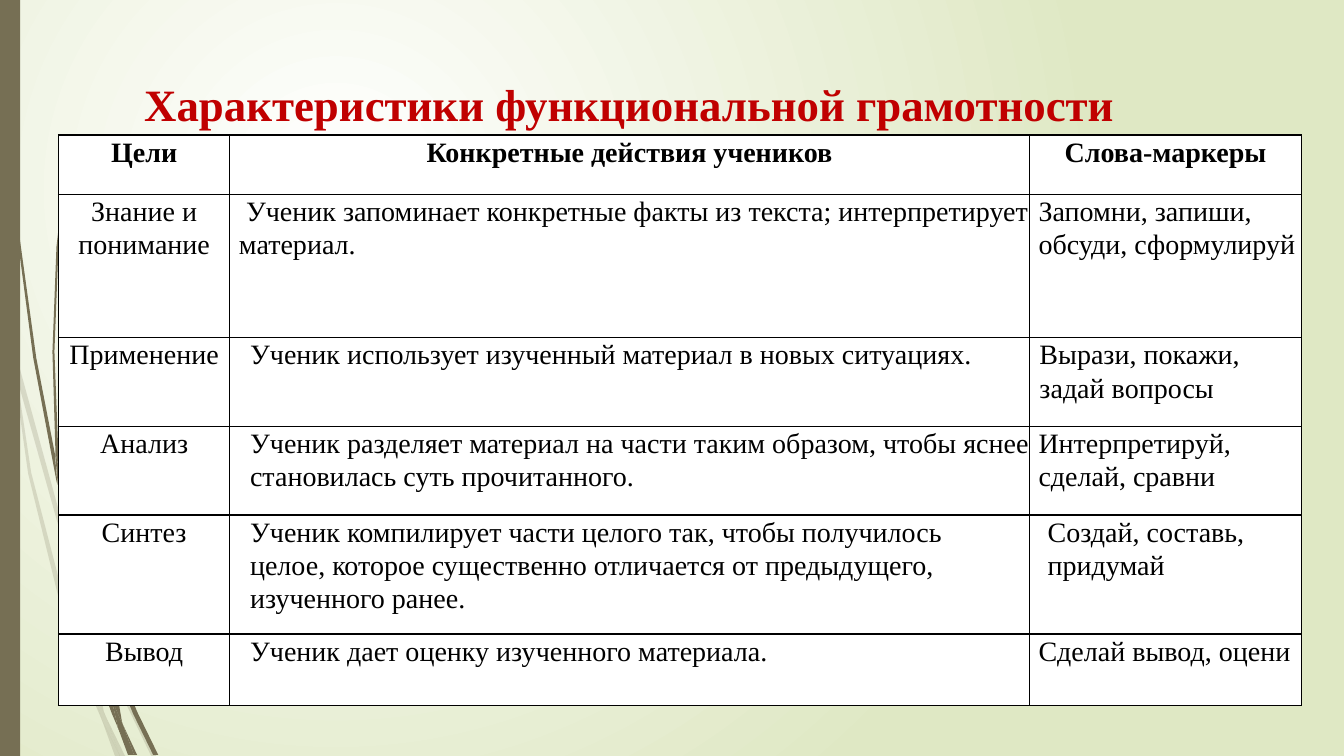
from dataclasses import dataclass

from lxml import etree
from pptx import Presentation
from pptx.dml.color import RGBColor
from pptx.enum.shapes import MSO_SHAPE
from pptx.enum.text import MSO_ANCHOR, MSO_AUTO_SIZE, PP_ALIGN
from pptx.oxml.ns import qn
from pptx.util import Inches, Pt

CENTER, LEFT, JUSTIFY = PP_ALIGN.CENTER, PP_ALIGN.LEFT, PP_ALIGN.JUSTIFY
TOP, NO_AUTOFIT = MSO_ANCHOR.TOP, MSO_AUTO_SIZE.NONE
RECTANGLE = MSO_SHAPE.RECTANGLE


@dataclass(frozen=True)
class Theme:
    font: str = "Times New Roman"
    title_size: int = 32
    table_size: int = 20
    line_spacing: float = 1.07
    title: str = "C00000"
    text: str = "000000"
    paper: str = "FFFFFF"
    meadow: str = "DFE8C4"
    stem: str = "766F54"


THEME = Theme()

# Outlines of the grass blades, in inches on the slide
PALE_BLADES = [
    [(.11, 3.5), (.09, 3.22), (0, 2.82), (0, 2.99), (.1, 3.44)],
    [(.58, 5.22), (.84, 5.99), (.85, 5.86), (.62, 5.2), (.14, 3.45), (.17, 3.76)],
    [(.92, 6.07), (.88, 5.96), (.88, 6.1), (1.23, 6.94), (1.5, 7.5), (1.55, 7.5),
     (1.27, 6.92)],
    [(1.19, 7.5), (1.24, 7.5), (1.05, 7.11)],
    [(.93, 6.83), (.7, 6.19), (.31, 4.69), (.17, 3.76), (.11, 3.5), (.28, 4.7),
     (.65, 6.21), (.92, 6.93), (1.01, 7.14), (.99, 7.07)],
    [(.84, 5.99), (.87, 6.46), (.93, 6.83), (.96, 6.92), (1.05, 7.11), (1.03, 7.06),
     (.91, 6.46), (.88, 6.1), (.88, 6.08)],
    [(.88, 5.84), (1.1, 4.62), (1.6, 3.49), (2.29, 2.45), (2.68, 1.98), (2.9, 1.75),
     (3.12, 1.54), (3.12, 1.53), (2.89, 1.75), (2.68, 1.97), (2.28, 2.44),
     (1.58, 3.48), (1.07, 4.61), (.85, 5.84), (.85, 5.86), (.88, 5.96)],
    [(1.01, 7.14), (1.14, 7.5), (1.19, 7.5)],
    [(.88, 6.08), (.88, 6.1), (.88, 5.96), (.85, 5.86), (.84, 5.99)],
    [(.96, 6.92), (.93, 6.83), (.99, 7.07), (1.01, 7.14), (1.19, 7.5), (1.05, 7.11)],
]
DARK_BLADES = [
    [(.07, 1.1), (.17, 2.33), (.33, 3.55), (.56, 4.77), (.57, 4.81), (.55, 4.57),
     (.55, 4.53), (.36, 3.55), (.19, 2.32), (.08, 1.09), (.05, .48), (.04, 0),
     (.03, 0), (.04, .48)],
    [(.88, 5.92), (1.06, 6.45), (1.06, 6.31), (.93, 5.9), (.6, 4.72), (.64, 5.05)],
    [(1.13, 6.49), (1.1, 6.41), (1.11, 6.56), (1.32, 7.08), (1.52, 7.49),
     (1.57, 7.49), (1.36, 7.06)],
    [(1.1, 6.91), (.98, 6.57), (.72, 5.56), (.64, 5.05), (.57, 4.77), (.68, 5.57),
     (.93, 6.59), (1.11, 7.08), (1.17, 7.22), (1.16, 7.17)],
    [(.6, 4.72), (.58, 4.53), (.54, 3.49), (.58, 2.45), (.63, 1.93), (.7, 1.41),
     (.62, 1.93), (.56, 2.45), (.52, 3.49), (.55, 4.49)],
    [(1.33, 7.49), (1.36, 7.49), (1.22, 7.19)],
    [(.57, 4.77), (.64, 5.05), (.6, 4.72), (.55, 4.49), (.55, 4.53)],
    [(1.11, 6.33), (1.25, 5.52), (1.58, 4.76), (2.05, 4.06), (2.31, 3.74),
     (2.45, 3.59), (2.61, 3.44), (2.6, 3.44), (2.45, 3.58), (2.31, 3.73),
     (2.04, 4.05), (1.56, 4.74), (1.22, 5.51), (1.06, 6.31), (1.1, 6.41)],
    [(1.17, 7.22), (1.27, 7.49), (1.31, 7.49)],
    [(1.06, 6.45), (1.1, 6.91), (1.16, 7.06), (1.22, 7.19), (1.21, 7.16),
     (1.11, 6.56), (1.09, 6.51)],
    [(1.06, 6.45), (1.09, 6.51), (1.11, 6.56), (1.1, 6.41), (1.06, 6.31)],
    [(1.16, 7.06), (1.1, 6.91), (1.16, 7.17), (1.17, 7.22), (1.3, 7.49),
     (1.33, 7.49), (1.22, 7.19)],
]

COLUMN_WIDTHS = [1.7, 7.93, 2.7]
ROW_HEIGHTS = [.59, 1.42, .88, .88, 1.18, .71]
HEADINGS = ["Цели", "Конкретные действия учеников", "Слова-маркеры"]
# Goal, pupil actions, marker words; then (left margin, first-line indent) of the last two
GOALS = [
    (["Знание и", "понимание"],
     ["Ученик запоминает конкретные факты из текста; интерпретирует материал."],
     ["Запомни, запиши,", "обсуди, сформулируй"], (.09, .07), (.09, 0)),
    (["Применение"], ["Ученик использует изученный материал в новых ситуациях."],
     ["Вырази, покажи,", "задай вопросы"], (.09, .11), (.1, 0)),
    (["Анализ"],
     ["Ученик разделяет материал на части таким образом, чтобы яснее "
      "становилась суть прочитанного."],
     ["Интерпретируй, сделай, сравни"], (.2, 0), (.09, 0)),
    (["Синтез"],
     ["Ученик компилирует части целого так, чтобы получилось",
      "целое, которое существенно отличается от предыдущего,", "изученного ранее."],
     ["Создай, составь,", "придумай"], (.2, 0), (.09, .09)),
    (["Вывод"], ["Ученик дает оценку изученного материала."],
     ["Сделай вывод, оцени"], (.2, 0), (.09, 0)),
]


def rgb(color):
    return RGBColor.from_string(color)


def paint_background(slide):
    """Radial gradient, lightest in the upper left quarter."""
    fill = slide.background.fill
    fill.gradient()
    for stop, color in zip(fill.gradient_stops, (THEME.paper, THEME.meadow)):
        stop.color.rgb = rgb(color)
    gradient = slide.background._cSld.find(".//" + qn("a:gradFill"))
    linear = gradient.find(qn("a:lin"))
    circle = etree.Element(qn("a:path"), {"path": "circle"})
    etree.SubElement(circle, qn("a:fillToRect"),
                     {"l": "50000", "t": "50000", "r": "100000", "b": "100000"})
    gradient.replace(linear, circle)


def fill_stem(shape, opacity):
    shape.shadow.inherit = False
    shape.fill.solid()
    shape.fill.fore_color.rgb = rgb(THEME.stem)
    shape.line.fill.background()
    if opacity < 100:
        color = shape._element.spPr.find(".//" + qn("a:srgbClr"))
        etree.SubElement(color, qn("a:alpha"), {"val": str(opacity * 1000)})


def add_grass(slide, blades, opacity):
    grass = slide.shapes.add_group_shape()
    for outline in blades:
        start, *others = [(Inches(x), Inches(y)) for x, y in outline]
        builder = grass.shapes.build_freeform(*start)
        builder.add_line_segments(others, close=True)
        fill_stem(builder.convert_to_shape(), opacity)


def write_lines(frame, lines, size, color, bold=False, align=LEFT, indent=(0, 0)):
    for number, line in enumerate(lines):
        paragraph = frame.add_paragraph() if number else frame.paragraphs[0]
        paragraph.alignment = align
        paragraph.line_spacing = THEME.line_spacing
        paragraph.space_before = Pt(0)
        margin, first_line = indent
        properties = paragraph._p.get_or_add_pPr()
        properties.set("marL", str(Inches(margin)))
        properties.set("indent", str(Inches(first_line if number == 0 or margin == .09 else 0)))
        run = paragraph.add_run()
        run.text = line
        run.font.name, run.font.size, run.font.bold = THEME.font, Pt(size), bold
        run.font.color.rgb = rgb(color)


def add_title(slide, left, top, width, height):
    title = slide.shapes.title
    title.left, title.top, title.width, title.height = map(Inches, (left, top, width, height))
    frame = title.text_frame
    frame.word_wrap, frame.auto_size, frame.vertical_anchor = True, NO_AUTOFIT, TOP
    write_lines(frame, ["Характеристики функциональной грамотности"],
                THEME.title_size, THEME.title, bold=True, align=JUSTIFY)


def format_cell(cell):
    cell.margin_left = cell.margin_right = cell.margin_top = cell.margin_bottom = 0
    properties = cell._tc.get_or_add_tcPr()
    for side in ("a:lnL", "a:lnR", "a:lnT", "a:lnB"):
        border = etree.SubElement(properties, qn(side), {"w": str(Pt(1))})
        solid = etree.SubElement(border, qn("a:solidFill"))
        etree.SubElement(solid, qn("a:srgbClr"), {"val": THEME.text})
    cell.fill.solid()
    cell.fill.fore_color.rgb = rgb(THEME.paper)


def add_goals_table(slide, left, top):
    size = Inches(sum(COLUMN_WIDTHS)), Inches(sum(ROW_HEIGHTS))
    table = slide.shapes.add_table(len(ROW_HEIGHTS), len(COLUMN_WIDTHS),
                                   Inches(left), Inches(top), *size).table
    for column, width in zip(table.columns, COLUMN_WIDTHS):
        column.width = Inches(width)
    for row, height in zip(table.rows, ROW_HEIGHTS):
        row.height = Inches(height)
    for cell in table.iter_cells():
        format_cell(cell)
    for column, heading in enumerate(HEADINGS):
        write_lines(table.cell(0, column).text_frame, [heading], THEME.table_size,
                    THEME.text, bold=True, align=CENTER)
    for row, (goal, actions, markers, *indents) in enumerate(GOALS, 1):
        columns = zip((goal, actions, markers), (CENTER, LEFT, LEFT), ((0, 0), *indents))
        for column, (lines, align, indent) in enumerate(columns):
            write_lines(table.cell(row, column).text_frame, lines, THEME.table_size,
                        THEME.text, align=align, indent=indent)


def main():
    deck = Presentation()
    deck.slide_width, deck.slide_height = Inches(13.33), Inches(7.5)
    slide = deck.slides.add_slide(deck.slide_layouts[5])
    paint_background(slide)
    add_grass(slide, PALE_BLADES, 20)
    add_grass(slide, DARK_BLADES, 100)
    fill_stem(slide.shapes.add_shape(RECTANGLE, 0, 0, Inches(.2), deck.slide_height), 100)
    add_title(slide, 1.33, .67, 10.58, .68)
    add_goals_table(slide, .58, 1.34)
    deck.save("out.pptx")


if __name__ == "__main__":
    main()
